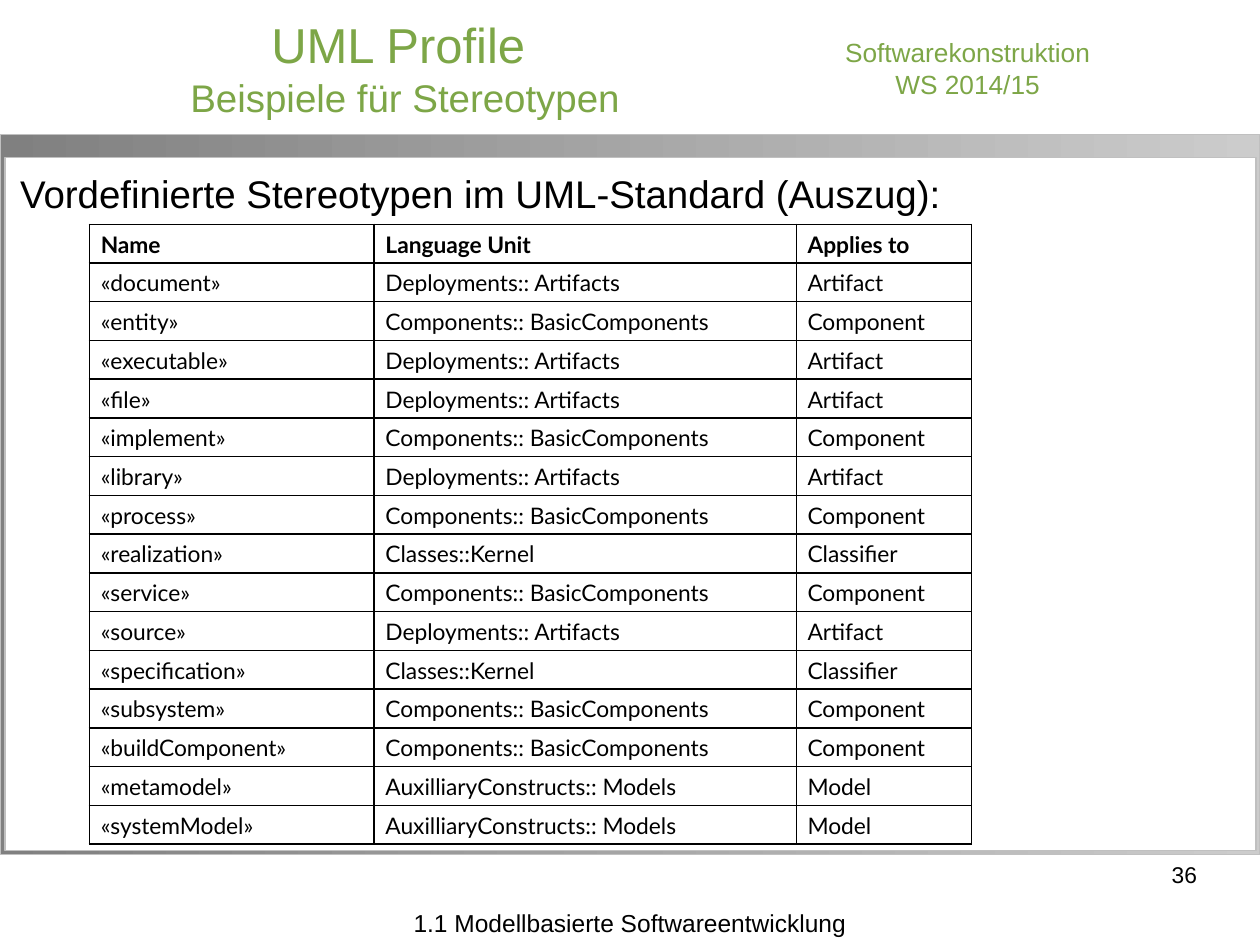
"""Build the slide listing the predefined UML stereotypes."""
from lxml import etree
from pptx import Presentation, util as u
from pptx.dml.color import RGBColor
from pptx.enum import shapes, text
from pptx.oxml import ns

WIDTH, HEIGHT = 10, 7.5
COLORS = {"green": "7DA647", "black": "000000", "white": "FFFFFF",
          "frame": "C0C0C0", "dark": "808080", "light": "CCCCCC"}
ALIGN = text.PP_ALIGN
HEADINGS = ("Name", "Language Unit", "Applies to")
COLUMN_WIDTHS = (2.26, 3.35, 1.39)
TABLE_HEIGHT = 4.92
ARTIFACTS = ("Deployments:: Artifacts", "Artifact")
COMPONENTS = ("Components:: BasicComponents", "Component")
KERNEL = ("Classes::Kernel", "Classifier")
MODELS = ("AuxilliaryConstructs:: Models", "Model")
STEREOTYPES = {
    "document": ARTIFACTS, "entity": COMPONENTS, "executable": ARTIFACTS,
    "file": ARTIFACTS, "implement": COMPONENTS, "library": ARTIFACTS,
    "process": COMPONENTS, "realization": KERNEL, "service": COMPONENTS,
    "source": ARTIFACTS, "specification": KERNEL, "subsystem": COMPONENTS,
    "buildComponent": COMPONENTS, "metamodel": MODELS, "systemModel": MODELS,
}


def rgb(name):
    return RGBColor.from_string(COLORS[name])


def box(left, top, width, height):
    return [u.Inches(length) for length in (left, top, width, height)]


def style(paragraph, size, color, align=ALIGN.LEFT, face="Arial", bold=False):
    paragraph.alignment = align
    font = paragraph.font
    font.name, font.size, font.bold = face, u.Pt(size), bold
    font.color.rgb = rgb(color)


def fill_frame(frame, lines, color, align, insets=(0, 0), wrap=False,
               anchor=text.MSO_ANCHOR.TOP):
    """Write (words, size) lines into a text frame."""
    frame.auto_size = text.MSO_AUTO_SIZE.NONE
    frame.word_wrap = wrap
    frame.vertical_anchor = anchor
    frame.margin_left = frame.margin_right = u.Inches(insets[0])
    frame.margin_top = frame.margin_bottom = u.Inches(insets[1])
    frame.text = "\n".join(words for words, _ in lines)
    for paragraph, (_, size) in zip(frame.paragraphs, lines):
        style(paragraph, size, color, align)
        paragraph.space_before = u.Pt(0)


def add_label(slide, place, lines, color, align, **options):
    label = slide.shapes.add_textbox(*box(*place))
    fill_frame(label.text_frame, lines, color, align, **options)


def add_panel(slide, place):
    panel = slide.shapes.add_shape(shapes.MSO_SHAPE.RECTANGLE, *box(*place))
    panel.shadow.inherit = False
    panel.line.color.rgb = rgb("frame")
    panel.line.width = u.Pt(0.75)
    return panel


def add_frame(slide):
    border = add_panel(slide, (0, 1.07, WIDTH, 5.71))
    border.fill.gradient()
    border.fill.gradient_angle = 0
    for stop, shade in zip(border.fill.gradient_stops, ("dark", "light")):
        stop.color.rgb = rgb(shade)
    content = add_panel(slide, (0.04, 1.25, 9.93, 5.5))
    content.fill.solid()
    content.fill.fore_color.rgb = rgb("white")


def set_title(slide):
    title = slide.shapes.title
    title.left, title.top, title.width, title.height = box(0, 0, 6.43, 1.07)
    fill_frame(title.text_frame,
               [("UML Profile ", 28), ("Beispiele für Stereotypen", 22)],
               "green", ALIGN.CENTER, anchor=text.MSO_ANCHOR.MIDDLE)


def outline(cell):
    properties = cell._tc.get_or_add_tcPr()
    for side in ("lnL", "lnR", "lnT", "lnB"):
        line = etree.SubElement(properties, ns.qn(f"a:{side}"), w=str(u.Pt(1)))
        solid = etree.SubElement(line, ns.qn("a:solidFill"))
        etree.SubElement(solid, ns.qn("a:srgbClr"), val=COLORS["black"])


def add_stereotypes(slide):
    rows = [HEADINGS] + [(f"«{name}»", *use) for name, use in STEREOTYPES.items()]
    place = box(0.71, 1.78, sum(COLUMN_WIDTHS), TABLE_HEIGHT)
    table = slide.shapes.add_table(len(rows), len(HEADINGS), *place).table
    table.first_row = table.horz_banding = False
    for column, width in zip(table.columns, COLUMN_WIDTHS):
        column.width = u.Inches(width)
    for number, entries in enumerate(rows):
        table.rows[number].height = u.Inches(TABLE_HEIGHT / len(rows))
        for cell, entry in zip(table.rows[number].cells, entries):
            outline(cell)
            cell.fill.solid()
            cell.fill.fore_color.rgb = rgb("white")
            cell.margin_left = cell.margin_right = u.Inches(0.09)
            cell.margin_top, cell.margin_bottom = u.Inches(0.05), u.Inches(0.04)
            cell.text = entry
            style(cell.text_frame.paragraphs[0], 13, "black",
                  face="Lato", bold=number == 0)


def main():
    deck = Presentation()
    deck.slide_width, deck.slide_height = u.Inches(WIDTH), u.Inches(HEIGHT)
    slide = deck.slides.add_slide(deck.slide_layouts[5])
    add_frame(slide)
    set_title(slide)
    add_label(slide, (6.43, 0.25, 2.5, 1.07),
              [("Softwarekonstruktion", 15), ("WS 2014/15", 15)],
              "green", ALIGN.CENTER, insets=(0.09, 0.04))
    add_label(slide, (0.07, 1.3, WIDTH, 5.44),
              [("Vordefinierte Stereotypen im UML-Standard (Auszug):", 22)],
              "black", ALIGN.LEFT, insets=(0.09, 0.05), wrap=True)
    add_stereotypes(slide)
    add_label(slide, (2.41, 7.21, 5.18, 0.23),
              [("1.1 Modellbasierte Softwareentwicklung", 14)],
              "black", ALIGN.CENTER)
    add_label(slide, (7.17, 6.83, 2.33, 0.31), [("36", 13)],
              "black", ALIGN.RIGHT)
    deck.save("out.pptx")


if __name__ == "__main__":
    main()
